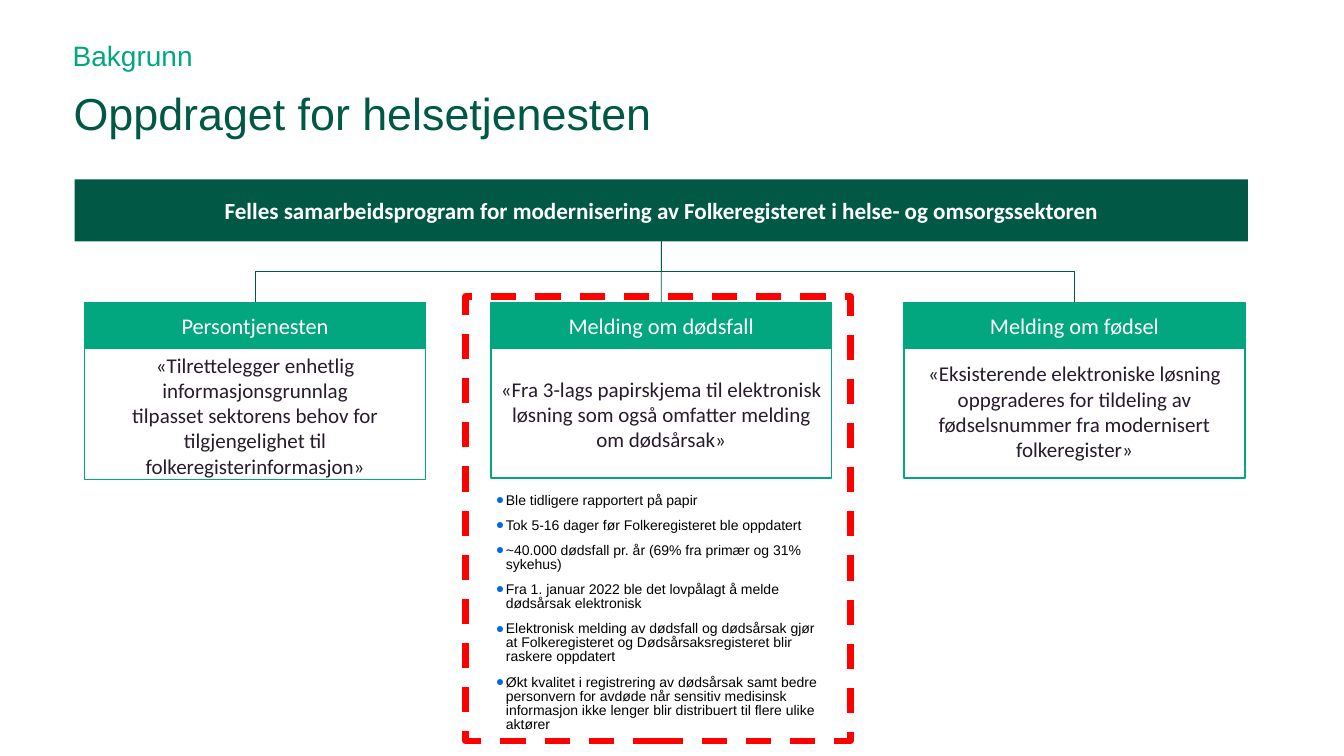
from lxml import etree
from pptx import Presentation
from pptx.dml.color import RGBColor
from pptx.enum.dml import MSO_LINE
from pptx.enum.shapes import MSO_CONNECTOR, MSO_SHAPE
from pptx.enum.text import MSO_ANCHOR, MSO_AUTO_SIZE, PP_ALIGN
from pptx.oxml.ns import qn
from pptx.util import Pt

RECT = MSO_SHAPE.RECTANGLE
ELBOW, STRAIGHT = MSO_CONNECTOR.ELBOW, MSO_CONNECTOR.STRAIGHT
LEFT, CENTER = PP_ALIGN.LEFT, PP_ALIGN.CENTER
TOP, MIDDLE = MSO_ANCHOR.TOP, MSO_ANCHOR.MIDDLE
DASH, NO_FIT = MSO_LINE.DASH, MSO_AUTO_SIZE.NONE

COLORS = {"dark": "015945", "green": "02A67F", "white": "FFFFFF", "ink": "281C2C",
          "black": "000000", "red": "FF0000", "bullet": "0169E8"}

BAR = (53.3, 128.2, 838.1, 44.2)
BAR_TEXT = "Felles samarbeidsprogram for modernisering av Folkeregisteret i helse- og omsorgssektoren"
CARD_TOP, CARD_W, HEAD_H = 216, 243.4, 33.1
# left edge, body height, body top inset, heading, body text
CARDS = [
    (60.5, 93.6, 4.3, "Persontjenesten",
     "«Tilrettelegger enhetlig informasjonsgrunnlag\n"
     "tilpasset sektorens behov for tilgjengelighet til folkeregisterinformasjon»"),
    (350.6, 92.2, 4.3, "Melding om dødsfall",
     "«Fra 3-lags papirskjema til elektronisk løsning som også omfatter melding om dødsårsak»"),
    (645.8, 92.2, 0, "Melding om fødsel",
     "«Eksisterende elektroniske løsning oppgraderes for tildeling av "
     "fødselsnummer fra modernisert folkeregister»"),
]
POINTS = [
    "Ble tidligere rapportert på papir",
    "Tok 5-16 dager før Folkeregisteret ble oppdatert",
    "~40.000 dødsfall pr. år (69% fra primær og 31% sykehus)",
    "Fra 1. januar 2022 ble det lovpålagt å melde dødsårsak elektronisk",
    "Elektronisk melding av dødsfall og dødsårsak gjør at Folkeregisteret og "
    "Dødsårsaksregisteret blir raskere oppdatert",
    "Økt kvalitet i registrering av dødsårsak samt bedre personvern for avdøde når sensitiv "
    "medisinsk informasjon ikke lenger blir distribuert til flere ulike aktører",
]


def rgb(name):
    return RGBColor.from_string(COLORS[name])


def place(shape, box):
    shape.left, shape.top, shape.width, shape.height = map(Pt, box)


def write(shape, text, size, color, font, inset, align=LEFT, anchor=TOP, bold=False):
    frame = shape.text_frame
    frame.text = text
    frame.word_wrap = True
    frame.auto_size = NO_FIT
    frame.vertical_anchor = anchor
    (frame.margin_left, frame.margin_top,
     frame.margin_right, frame.margin_bottom) = map(Pt, inset)
    for para in frame.paragraphs:
        para.alignment = align
        para.space_before = Pt(0)
        for run in para.runs:
            run.font.size, run.font.name, run.font.bold = Pt(size), font, bold
            run.font.color.rgb = rgb(color)
    return frame


def mark(para, indent=0, char=None):
    """Set the bullet of a paragraph, or remove it when no character is given."""
    props = para._p.get_or_add_pPr()
    props.set("marL", str(Pt(indent)))
    props.set("indent", str(-Pt(indent)))
    if char is None:
        etree.SubElement(props, qn("a:buNone"))
        return
    color = etree.SubElement(props, qn("a:buClr"))
    etree.SubElement(color, qn("a:srgbClr"), val=COLORS["bullet"])
    etree.SubElement(props, qn("a:buFont"), typeface="Arial")
    etree.SubElement(props, qn("a:buChar"), char=char)


def header(title, kicker):
    place(title, (49.7, 61.2, 884.2, 44.6))
    write(title, "Oppdraget for helsetjenesten", 32, "dark", "Arial", (2.9, 0, 0, 0))
    place(kicker, (49, 27.4, 884.2, 28.1))
    frame = write(kicker, "Bakgrunn", 20, "green", "Arial", (2.9, 0, 2.9, 0))
    mark(frame.paragraphs[0])


def panel(slide, box, fill=None, line=None, width=1):
    shape = slide.shapes.add_shape(RECT, *map(Pt, box))
    shape.shadow.inherit = False
    if fill:
        shape.fill.solid()
        shape.fill.fore_color.rgb = rgb(fill)
    else:
        shape.fill.background()
    if line:
        shape.line.color.rgb = rgb(line)
        shape.line.width = Pt(width)
    else:
        shape.line.fill.background()
    return shape


def card(slide, box, inset, head, text):
    left, top, width, height = box
    body = panel(slide, (left, top + HEAD_H, width, height - HEAD_H), "white", "green")
    write(body, text, 15, "ink", "Calibri", (5.8, inset, 5.8, 2.9), CENTER, MIDDLE)
    cap = panel(slide, (left, top, width, HEAD_H), "green", "green")
    write(cap, head, 16, "white", "Calibri", (5.8, 2.9, 5.8, 2.9), CENTER, MIDDLE)


def branch(slide, x, y, end_x, end_y):
    """Draw a link that leaves downwards and bends halfway to its end."""
    kind, turn = STRAIGHT, 0
    ends = (x, y, end_x, end_y)
    if abs(end_x - x) > 1:
        kind, turn = ELBOW, 90 if end_x < x else 270
        mid_x, mid_y = (x + end_x) / 2, (y + end_y) / 2
        half_w, half_h = (end_y - y) / 2, abs(end_x - x) / 2
        if turn == 270:
            half_w = -half_w
        ends = (mid_x - half_w, mid_y - half_h, mid_x + half_w, mid_y + half_h)
    link = slide.shapes.add_connector(kind, *map(Pt, ends))
    link.line.color.rgb = rgb("dark")
    link.line.width = Pt(0.5)
    props = link._element.spPr
    props.find(qn("a:xfrm")).set("rot", str(turn * 60000))
    etree.SubElement(props, qn("a:effectLst"))


def details(shape, box):
    place(shape, box)
    frame = write(shape, "\n".join(POINTS), 10, "black", "Arial", (3.6, 1.4, 3.6, 1.4))
    for i, para in enumerate(frame.paragraphs):
        para.line_spacing = Pt(10)
        para.space_before = Pt(5 if i else 0)
        para.space_after = Pt(3)
        mark(para, 7.2, "●")


def main():
    deck = Presentation()
    deck.slide_width, deck.slide_height = Pt(960), Pt(540)
    slide = deck.slides.add_slide(deck.slide_layouts[3])
    title, kicker, notes = slide.placeholders
    header(title, kicker)

    bar = panel(slide, BAR, "dark")
    write(bar, BAR_TEXT, 16.5, "white", "Calibri", (5.8, 2.9, 5.8, 2.9), CENTER, MIDDLE, True)
    stem_x, stem_y = BAR[0] + BAR[2] / 2, BAR[1] + BAR[3]
    for left, height, inset, head, text in CARDS:
        card(slide, (left, CARD_TOP, CARD_W, HEAD_H + height), inset, head, text)
        branch(slide, stem_x, stem_y, left + CARD_W / 2, CARD_TOP)

    frame = panel(slide, (332.6, 211.7, 275, 317.5), line="red", width=4.5)
    frame.line.dash_style = DASH
    details(notes, (350.6, 351.4, 244.1, 179.3))
    deck.save("out.pptx")


if __name__ == "__main__":
    main()
